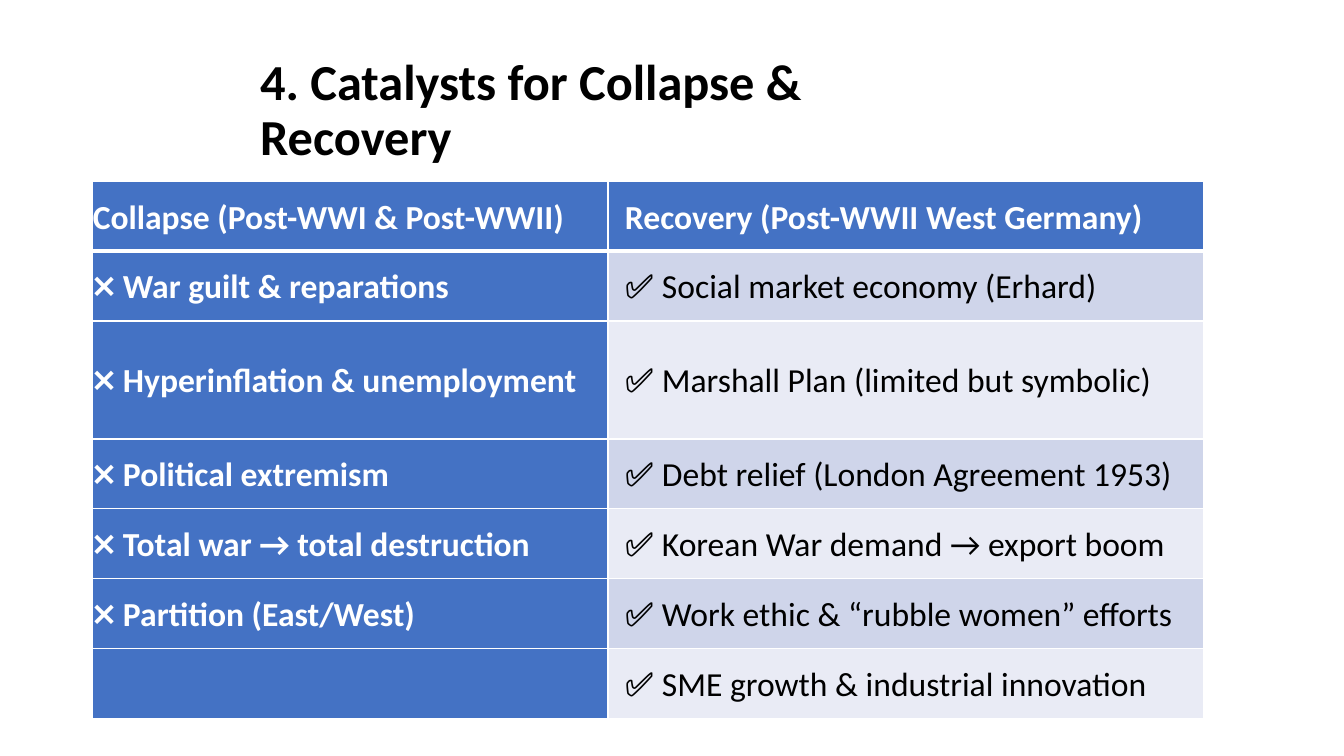
import pptx
import pptx.dml.color
import pptx.enum.text
import pptx.oxml.ns
import pptx.util
from lxml import etree

Cm, Pt = pptx.util.Cm, pptx.util.Pt

HEADING = "4. Catalysts for Collapse & Recovery"
CATALYSTS = [
    ("Collapse (Post-WWI & Post-WWII)", "Recovery (Post-WWII West Germany)"),
    ("❌ War guilt & reparations", "✅ Social market economy (Erhard)"),
    ("❌ Hyperinflation & unemployment", "✅ Marshall Plan (limited but symbolic)"),
    ("❌ Political extremism", "✅ Debt relief (London Agreement 1953)"),
    ("❌ Total war → total destruction", "✅ Korean War demand → export boom"),
    ("❌ Partition (East/West)", "✅ Work ethic & “rubble women” efforts"),
    ("", "✅ SME growth & industrial innovation"),
]
COLUMN_WIDTHS = [Cm(12.98), Cm(15.01)]
ROW_HEIGHT, TALL_ROW_HEIGHT, TALL_ROW = Cm(1.76), Cm(2.97), 2
SIDE_MARGIN, EDGE_MARGIN = Cm(0.43), Cm(0.25)
FONT = "Calibri"
WHITE, BLACK, BLUE = "FFFFFF", "000000", "4472C4"
BANDS = ["E9EBF5", "CFD5EA"]
THIN, THICK = Pt(1), Pt(3)


def rgb(hex_colour):
    return pptx.dml.color.RGBColor.from_string(hex_colour)


def style_font(font, size, colour, bold):
    font.name, font.size, font.bold = FONT, Pt(size), bold
    font.color.rgb = rgb(colour)


def set_borders(cell, widths):
    """Draw white left, right, top and bottom borders, in that order."""
    properties = cell._tc.get_or_add_tcPr()
    for position, (side, width) in enumerate(zip("LRTB", widths)):
        line = etree.Element(pptx.oxml.ns.qn(f"a:ln{side}"), w=str(width))
        fill = etree.SubElement(line, pptx.oxml.ns.qn("a:solidFill"))
        etree.SubElement(fill, pptx.oxml.ns.qn("a:srgbClr"), val=WHITE)
        properties.insert(position, line)


def fill_cell(cell, text, row, column):
    emphasised = row == 0 or column == 0
    cell.fill.solid()
    cell.fill.fore_color.rgb = rgb(BLUE if emphasised else BANDS[row % 2])
    set_borders(cell, (THIN, THIN, THICK if row == 1 else THIN, THICK if row == 0 else THIN))
    cell.vertical_anchor = pptx.enum.text.MSO_ANCHOR.MIDDLE
    cell.margin_left = 0 if column == 0 else SIDE_MARGIN
    cell.margin_right = SIDE_MARGIN if emphasised else 0
    cell.margin_top = cell.margin_bottom = EDGE_MARGIN
    cell.text_frame.text = text
    entry = cell.text_frame.paragraphs[0]
    entry.line_spacing, entry.space_after = 1.07, Pt(8)
    style_font(entry.font, 24, WHITE if emphasised else BLACK, emphasised)
    for run in entry.runs:
        style_font(run.font, 24, WHITE if emphasised else BLACK, emphasised)


def add_heading(slide):
    heading = slide.shapes.title
    heading.left, heading.top, heading.width, heading.height = Cm(6.3), Cm(2.11), Cm(18.64), Cm(1.4)
    frame = heading.text_frame
    frame.text = HEADING
    frame.auto_size = pptx.enum.text.MSO_AUTO_SIZE.NONE
    frame.vertical_anchor = pptx.enum.text.MSO_ANCHOR.MIDDLE
    line = frame.paragraphs[0]
    line.alignment, line.line_spacing = pptx.enum.text.PP_ALIGN.LEFT, 0.9
    style_font(line.runs[0].font, 36, BLACK, True)


def add_catalysts(slide):
    height = ROW_HEIGHT * (len(CATALYSTS) - 1) + TALL_ROW_HEIGHT
    catalysts = slide.shapes.add_table(
        len(CATALYSTS), len(COLUMN_WIDTHS), Cm(2.34), Cm(4.57), sum(COLUMN_WIDTHS), height
    ).table
    catalysts.first_col = True
    for column, width in enumerate(COLUMN_WIDTHS):
        catalysts.columns[column].width = width
    for row, texts in enumerate(CATALYSTS):
        catalysts.rows[row].height = TALL_ROW_HEIGHT if row == TALL_ROW else ROW_HEIGHT
        for column, text in enumerate(texts):
            fill_cell(catalysts.cell(row, column), text, row, column)


def main():
    deck = pptx.Presentation()
    deck.slide_width, deck.slide_height = Cm(33.87), Cm(19.05)
    slide = deck.slides.add_slide(deck.slide_layouts[5])
    add_heading(slide)
    add_catalysts(slide)
    deck.save("out.pptx")


if __name__ == "__main__":
    main()
